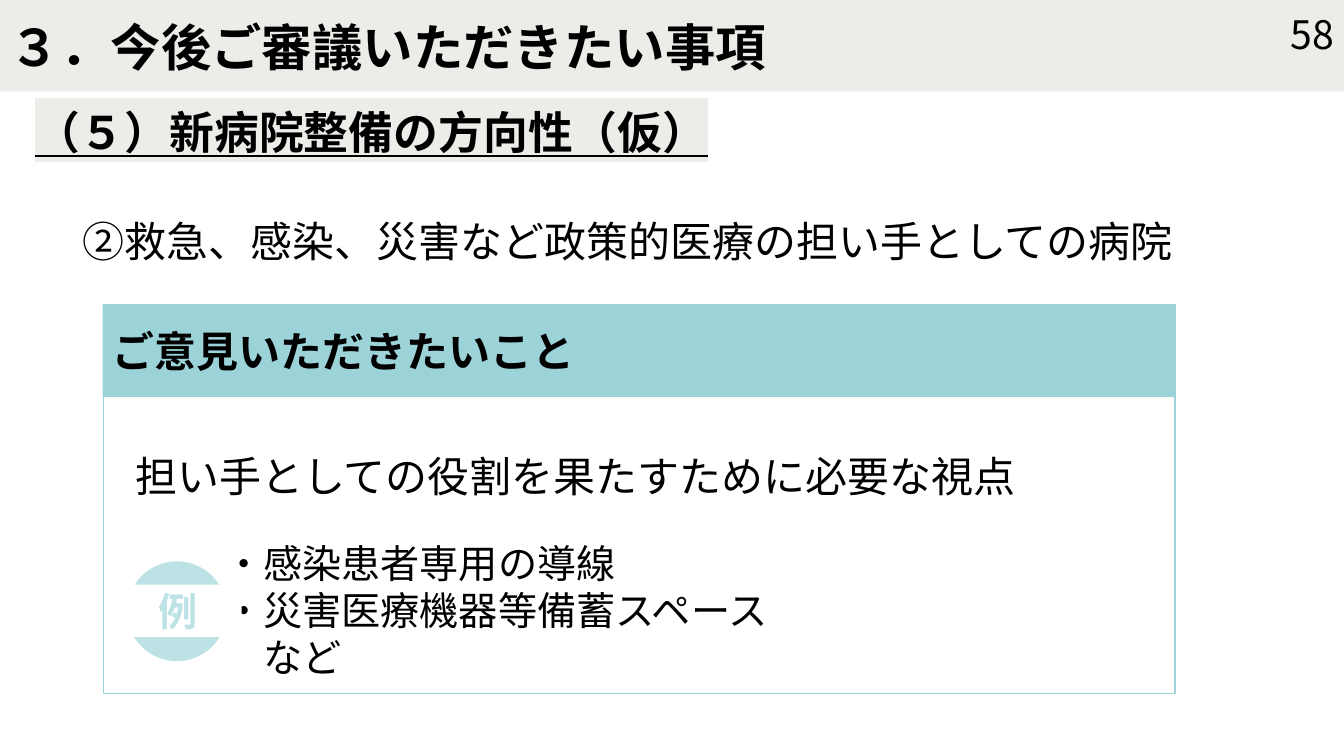
from lxml.etree import SubElement
from pptx import Presentation
from pptx.dml.color import RGBColor
from pptx.enum.shapes import MSO_SHAPE as Shape
from pptx.enum.text import MSO_ANCHOR as Anchor, PP_ALIGN as Align
from pptx.oxml.ns import qn
from pptx.util import Pt

BLACK = RGBColor(0x00, 0x00, 0x00)
WHITE = RGBColor(0xFF, 0xFF, 0xFF)
BAND = RGBColor(0xEC, 0xED, 0xE8)
TEAL = RGBColor(0x9B, 0xD3, 0xD9)
PALE_TEAL = RGBColor(0xBC, 0xE2, 0xE6)
SANS = "Noto Sans CJK JP"
MONO = "Noto Sans Mono"
PAGE_WIDTH, PAGE_HEIGHT = 960, 540


def write(box, text, size=30, color=BLACK, font=SANS, bold=False, underline=False,
          highlight=None, align=Align.LEFT, anchor=Anchor.MIDDLE):
    """Fill a box with text, one paragraph for each line."""
    frame = box.text_frame
    frame.word_wrap = True
    frame.vertical_anchor = anchor
    for index, line in enumerate(text.split("\n")):
        para = frame.add_paragraph() if index else frame.paragraphs[0]
        para.alignment = align
        span = para.add_run()
        span.text = line
        span.font.size = Pt(size)
        span.font.bold = bold
        span.font.underline = underline
        span.font.color.rgb = color
        props = span.font._element
        if highlight is not None:
            mark = SubElement(props, qn("a:highlight"))
            SubElement(mark, qn("a:srgbClr"), val=str(highlight))
        for tag in ("a:latin", "a:ea"):
            SubElement(props, qn(tag), typeface=font)


def add_text(page, left, top, width, height, text, **style):
    box = page.shapes.add_textbox(Pt(left), Pt(top), Pt(width), Pt(height))
    write(box, text, **style)


def add_block(shapes, kind, left, top, width, height, fill=None, line=None):
    block = shapes.add_shape(kind, Pt(left), Pt(top), Pt(width), Pt(height))
    block.shadow.inherit = False
    if fill is None:
        block.fill.background()
    else:
        block.fill.solid()
        block.fill.fore_color.rgb = fill
    if line is None:
        block.line.fill.background()
    else:
        block.line.color.rgb = line
        block.line.width = Pt(1)
    return block


def add_title_band(page, width, height):
    band = add_block(page.shapes, Shape.RECTANGLE, 0, 0, width, height, fill=BAND)
    write(band, "３．今後ご審議いただきたい事項", size=36, bold=True)
    add_text(page, width - 234, 9.4, 234, 29, "58", size=28, align=Align.RIGHT)


def add_headings(page, left, top):
    add_text(page, left, top, 924, 46, "（５）新病院整備の方向性（仮）", size=32,
             bold=True, underline=True, highlight=BAND, anchor=Anchor.TOP)
    add_text(page, left + 33.8, top + 79.2, 833, 80,
             "②救急、感染、災害など政策的医療の担い手としての病院", anchor=Anchor.TOP)


def add_example_badge(page, left, top, size):
    """Draw a disc cut by a white strip that holds the label."""
    shapes = page.shapes.add_group_shape().shapes
    add_block(shapes, Shape.OVAL, left, top, size, size, fill=PALE_TEAL)
    strip = add_block(shapes, Shape.RECTANGLE, left - 8.7, top + 16.6, 90.7, 37.4, fill=WHITE)
    write(strip, "例", size=28, color=PALE_TEAL, font=MONO, bold=True, align=Align.CENTER)


def add_opinion_panel(page, left, top, width, height):
    add_text(page, left + 16.2, top + 85.7, 780.5, 72.7,
             "担い手としての役割を果たすために必要な視点")
    add_text(page, left + 79.6, top + 176.4, 780.5, 84.2,
             "・感染患者専用の導線\n・災害医療機器等備蓄スペース\n\u3000など".replace("\\u3000", "　"), size=28)
    header = add_block(page.shapes, Shape.RECTANGLE, left, top, width, 66.2, fill=TEAL)
    write(header, "ご意見いただきたいこと", bold=True)
    add_block(page.shapes, Shape.RECTANGLE, left + 0.5, top, width - 0.5, height, line=TEAL)
    add_example_badge(page, left + 17.3, top + 183.6, 71.3)


def main():
    deck = Presentation()
    deck.slide_width, deck.slide_height = Pt(PAGE_WIDTH), Pt(PAGE_HEIGHT)
    page = deck.slides.add_slide(deck.slide_layouts[6])
    add_title_band(page, PAGE_WIDTH, 65.5)
    add_headings(page, 18, 71.3)
    add_opinion_panel(page, 73.4, 217.4, 766, 278)
    deck.save("out.pptx")


if __name__ == "__main__":
    main()
